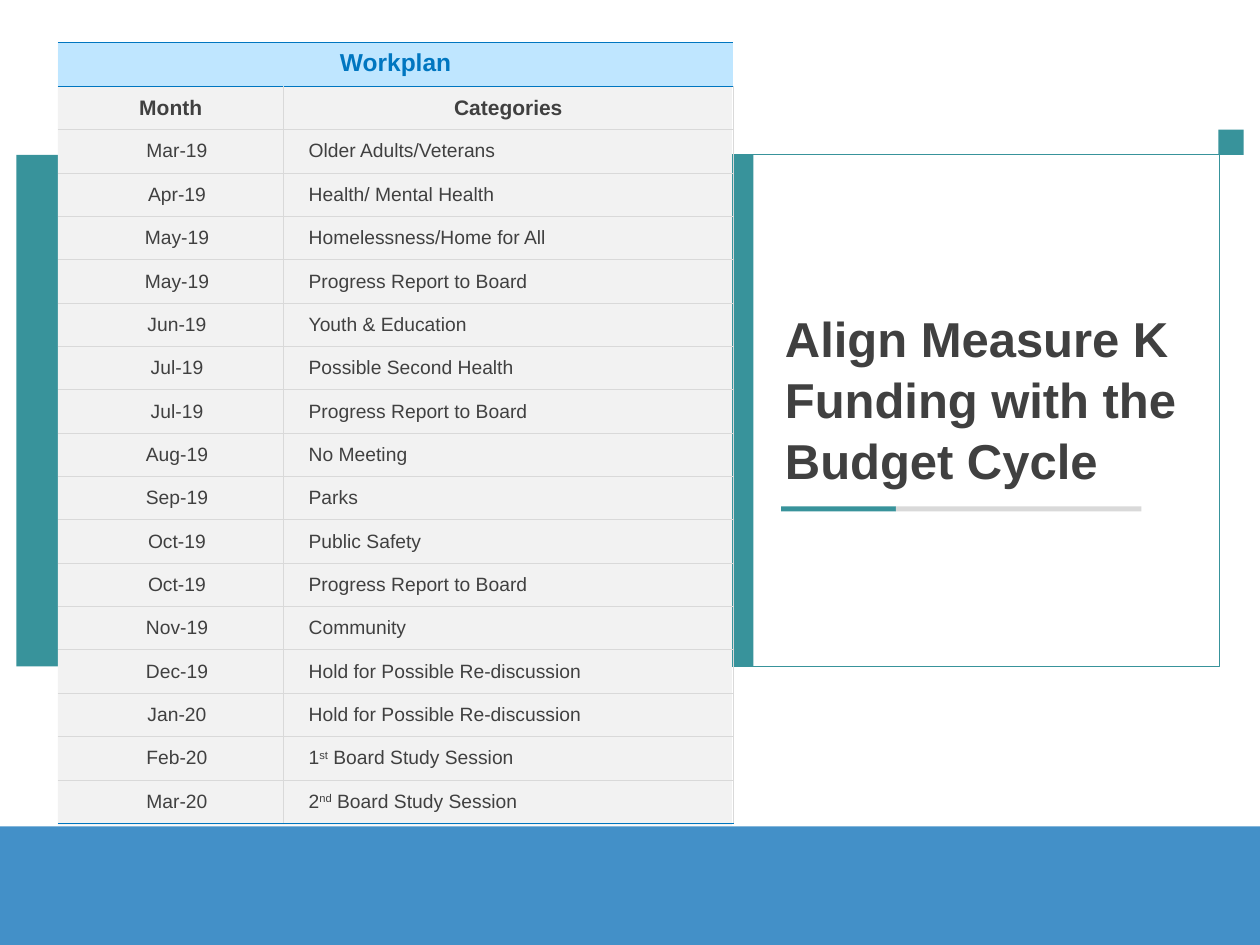
from lxml import etree
from pptx import Presentation
from pptx.dml.color import RGBColor
from pptx.enum.shapes import MSO_SHAPE
from pptx.enum.text import MSO_ANCHOR, PP_ALIGN
from pptx.oxml.ns import qn
from pptx.util import Inches, Pt

RECT = MSO_SHAPE.RECTANGLE
TOP, MIDDLE = MSO_ANCHOR.TOP, MSO_ANCHOR.MIDDLE
LEFT, CENTER = PP_ALIGN.LEFT, PP_ALIGN.CENTER

TEAL, BLUE, SKY = "38939B", "0076C0", "BFE6FF"
DARK, GREY, PALE = "404040", "D9D9D9", "F2F2F2"

PLAN = [
    ("Mar-19", "Older Adults/Veterans"),
    ("Apr-19", "Health/ Mental Health"),
    ("May-19", "Homelessness/Home for All"),
    ("May-19", "Progress Report to Board"),
    ("Jun-19", "Youth & Education"),
    ("Jul-19", "Possible Second Health"),
    ("Jul-19", "Progress Report to Board"),
    ("Aug-19", "No Meeting"),
    ("Sep-19", "Parks"),
    ("Oct-19", "Public Safety"),
    ("Oct-19", "Progress Report to Board"),
    ("Nov-19", "Community"),
    ("Dec-19", "Hold for Possible Re-discussion"),
    ("Jan-20", "Hold for Possible Re-discussion"),
    ("Feb-20", "1^st^ Board Study Session"),
    ("Mar-20", "2^nd^ Board Study Session"),
]


def color(code):
    return RGBColor.from_string(code)


def assign(target, values):
    for name, value in values.items():
        setattr(target, name, value)


class Deck:
    font = "Arial"

    def __init__(self, wide, high):
        self.prs = Presentation()
        assign(self.prs, {"slide_width": Inches(wide), "slide_height": Inches(high)})
        self.slide = self.prs.slides.add_slide(self.prs.slide_layouts[5])

    def style(self, font, size, code, bold):
        assign(font, {"name": self.font, "size": Pt(size), "bold": bold})
        font.color.rgb = color(code)

    def rect(self, box, fill=None, line=None, alpha=None):
        shape = self.slide.shapes.add_shape(RECT, *map(Inches, box))
        shape.shadow.inherit = False
        if fill:
            shape.fill.solid()
            shape.fill.fore_color.rgb = color(fill)
        else:
            shape.fill.background()
        if line:
            shape.line.color.rgb = color(line)
            shape.line.width = Pt(0.5)
        else:
            shape.line.fill.background()
        if alpha:
            tint = shape.fill._xPr.find(".//" + qn("a:srgbClr"))
            etree.SubElement(tint, qn("a:alpha")).set("val", str(alpha * 1000))

    def title(self, box, text):
        shape = self.slide.shapes.title
        places = zip(("left", "top", "width", "height"), map(Inches, box))
        assign(shape, dict(places))
        frame = shape.text_frame
        assign(frame, {"text": text, "word_wrap": True, "vertical_anchor": MIDDLE})
        para = frame.paragraphs[0]
        assign(para, {"alignment": LEFT, "line_spacing": 1.04})
        self.style(para.runs[0].font, 28, DARK, True)

    def table(self, box, cols, rows):
        grid = self.slide.shapes.add_table(rows, len(cols), *map(Inches, box)).table
        assign(grid, {"first_row": False, "horz_banding": False})
        for col, width in zip(grid.columns, cols):
            col.width = Inches(width)
        for row in grid.rows:
            row.height = Inches(box[3] / rows)
        return grid

    def cell(self, cell, text, size=11, code=DARK, bold=False, align=CENTER,
             anchor=MIDDLE, left=0.1, right=0.1, fill=None, edges=None):
        assign(cell, {"vertical_anchor": anchor,
                      "margin_left": Inches(left), "margin_right": Inches(right)})
        para = cell.text_frame.paragraphs[0]
        para.alignment = align
        # Text between carets is raised
        for i, part in enumerate(text.split("^")):
            run = para.add_run()
            run.text = part
            self.style(run.font, size, code, bold)
            if i % 2:
                run.font._element.set("baseline", "30000")
        if fill:
            cell.fill.solid()
            cell.fill.fore_color.rgb = color(fill)
        else:
            cell.fill.background()
        self.edges(cell, edges or {})

    def edges(self, cell, codes):
        props = cell._tc.get_or_add_tcPr()
        for i, side in enumerate("LRTB"):
            line = etree.Element(qn("a:ln" + side), w=str(Pt(0.5)))
            if side in codes:
                paint = etree.SubElement(line, qn("a:solidFill"))
                etree.SubElement(paint, qn("a:srgbClr")).set("val", codes[side])
            else:
                etree.SubElement(line, qn("a:noFill"))
            props.insert(i, line)


def main():
    deck = Deck(10, 7.5)

    # Footer band, frame and panels
    deck.rect((0, 6.56, 10, 0.94), "056CB6", alpha=75)
    deck.rect((3.7, 1.23, 5.98, 4.06), line=TEAL)
    deck.rect((0.13, 1.23, 5.85, 4.06), TEAL)
    deck.rect((0.46, 0.34, 5.35, 6.21), PALE)
    deck.rect((9.67, 1.03, 0.2, 0.2), TEAL)

    # Workplan table: banner, column heads, months
    last = len(PLAN) + 1
    grid = deck.table((0.46, 0.34, 5.35, 6.2), (1.79, 3.57), last + 1)
    rule = {"T": BLUE, "B": BLUE}
    grid.cell(0, 0).merge(grid.cell(0, 1))
    deck.cell(grid.cell(0, 0), "Workplan", 14, BLUE, True, anchor=TOP,
              fill=SKY, edges=rule)
    deck.edges(grid.cell(0, 1), rule)

    for r, pair in enumerate([("Month", "Categories")] + PLAN, 1):
        head = r == 1
        first = {"R": GREY, "T": BLUE if head else GREY,
                 "B": BLUE if r == last else GREY}
        looks = [{"edges": first}, {"edges": {**first, "L": GREY}}]
        if head:
            for look in looks:
                look.update(size=12, bold=True)
        else:
            looks[0].update(right=0)
            looks[1].update(align=LEFT, left=0.2)
        for c, text in enumerate(pair):
            deck.cell(grid.cell(r, c), text, **looks[c])

    # Title with two-tone underline
    deck.title((6.13, 2.4, 3.5, 1.51), "Align Measure K Funding with the Budget Cycle")
    deck.rect((6.2, 4.02, 0.91, 0.04), TEAL)
    deck.rect((7.11, 4.02, 1.95, 0.04), GREY)

    deck.prs.save("out.pptx")


if __name__ == "__main__":
    main()
